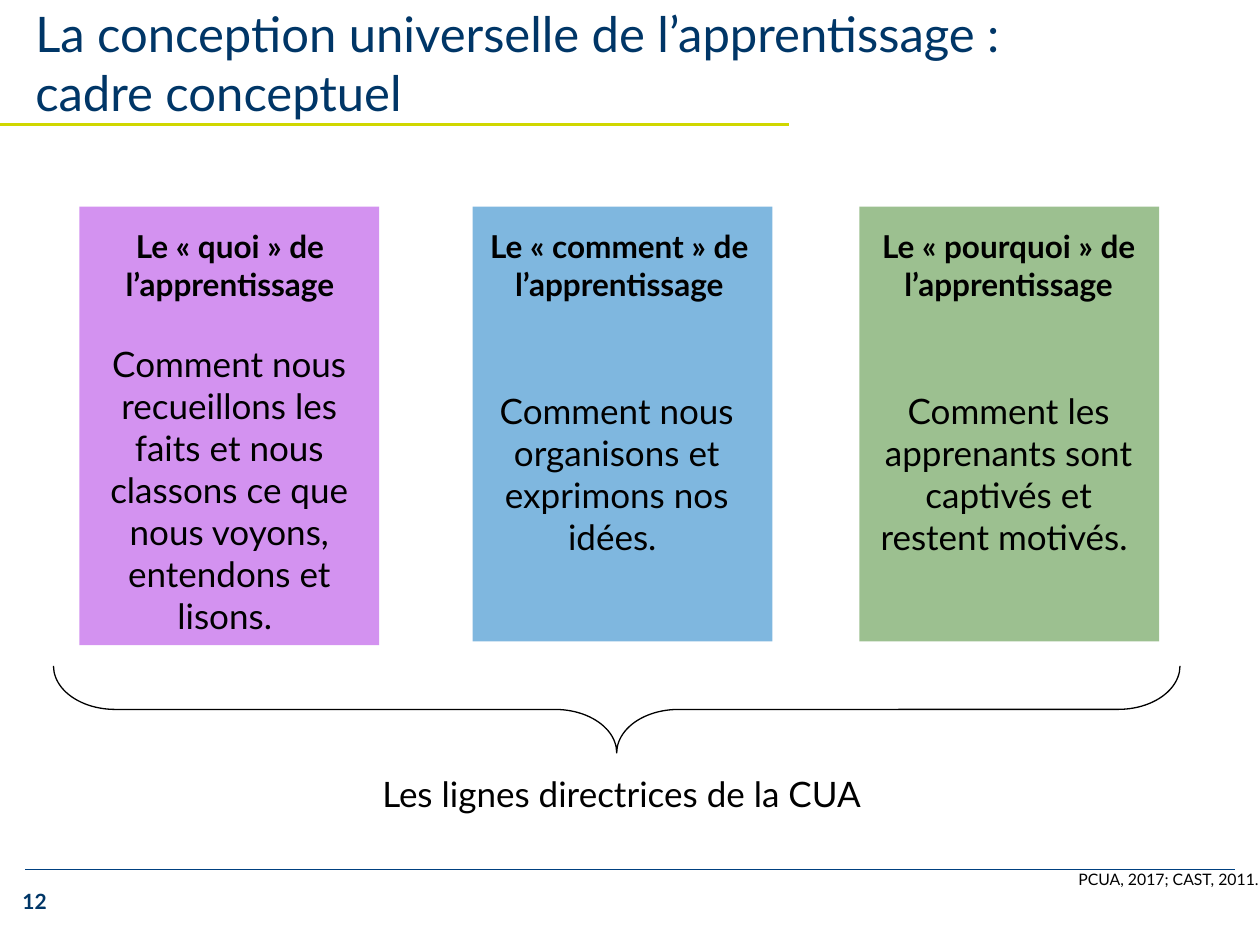
import pptx
import pptx.util
import pptx.dml.color
import pptx.enum.shapes
import pptx.enum.text
import pptx.oxml.ns
import lxml.etree

HUES = {
    "navy": "003667", "rule": "004080", "lime": "D0D700", "black": "000000",
    "quoi": "A826E2", "comment": "0070C0", "pourquoi": "3B8222",
}
FACE = "Lato"
CELL = 0.1  # inches: the slide is a grid of 100 columns by 75 rows
KIND = pptx.enum.shapes.MSO_SHAPE
ALIGN = pptx.enum.text.PP_ALIGN
ANCHOR = pptx.enum.text.MSO_ANCHOR
FIT = pptx.enum.text.MSO_AUTO_SIZE


def hue(name):
    return pptx.dml.color.RGBColor.from_string(HUES[name])


def grid(*cells):
    return [pptx.util.Inches(cell * CELL) for cell in cells]


def add_tag(parent, tag, **attrs):
    lxml.etree.SubElement(parent, pptx.oxml.ns.qn(tag), **attrs)


class Deck:
    def __init__(self):
        self.prs = pptx.Presentation()
        self.prs.slide_width, self.prs.slide_height = grid(100, 75)
        self.slide = self.prs.slides.add_slide(self.prs.slide_layouts[5])
        self.shapes = self.slide.shapes

    def style(self, shape, lines, size, color="black", bold=False,
              align=ALIGN.LEFT, anchor=ANCHOR.TOP):
        frame = shape.text_frame
        form = {"word_wrap": True, "auto_size": FIT.NONE,
                "vertical_anchor": anchor}
        for key, value in form.items():
            setattr(frame, key, value)
        frame.text = "\n".join(lines)
        look = {"name": FACE, "size": pptx.util.Pt(size), "bold": bold}
        for para in frame.paragraphs:
            para.alignment = align
            for run in para.runs:
                for key, value in look.items():
                    setattr(run.font, key, value)
                run.font.color.rgb = hue(color)

    def title(self, box, lines, **form):
        shape = self.shapes.title
        for key, value in zip(("left", "top", "width", "height"), grid(*box)):
            setattr(shape, key, value)
        self.style(shape, lines, **form)

    def text(self, box, words, **form):
        self.style(self.shapes.add_textbox(*grid(*box)), [words], **form)

    def line(self, start, end, color, width):
        rule = self.shapes.add_connector(
            pptx.enum.shapes.MSO_CONNECTOR.STRAIGHT, *grid(*start, *end))
        rule.line.color.rgb = hue(color)
        rule.line.width = pptx.util.Pt(width)
        add_tag(rule._element.spPr, "a:effectLst")

    def panel(self, box, color, alpha):
        shape = self.shapes.add_shape(KIND.RECTANGLE, *grid(*box))
        shape.shadow.inherit = False
        shape.fill.solid()
        shape.fill.fore_color.rgb = hue(color)
        shape.line.fill.background()
        tint = shape._element.spPr.find(".//" + pptx.oxml.ns.qn("a:srgbClr"))
        add_tag(tint, "a:alpha", val=str(alpha * 1000))

    def brace(self, box, bends):
        shape = self.shapes.add_shape(KIND.LEFT_BRACE, *grid(*box))
        shape.shadow.inherit = False
        shape.rotation = 270
        for i, bend in enumerate(bends):
            shape.adjustments[i] = bend
        shape.fill.background()
        shape.line.color.rgb = hue("black")
        shape.line.width = pptx.util.Pt(0.75)


def main():
    deck = Deck()
    mid = {"align": ALIGN.CENTER}

    # Rules, page number and title
    deck.line((2, 69), (98, 69), "rule", 0.5)
    deck.line((0, 9.9), (62.6, 9.9), "lime", 2)
    deck.text((0.8, 70, 9.5, 3), "12", size=12, color="navy", bold=True)
    deck.title((1.8, 0, 100.1, 9.9),
               ["La conception universelle de l’apprentissage :",
                "cadre conceptuel"],
               size=28, color="navy", anchor=ANCHOR.MIDDLE)

    # Source
    deck.text((84.6, 68.5, 16.8, 2.5), "PCUA, 2017; CAST, 2011.", size=9)

    # Panels: name, left, height, head left, body box, body text
    cards = [
        ("quoi", 6.3, 34.8, 7, (6.3, 26.7, 23.8, 24.6),
         "Comment nous recueillons les faits et nous classons ce que nous "
         "voyons, entendons et lisons. "),
        ("comment", 37.5, 34.5, 37.9, (37.7, 30.4, 22.5, 14.5),
         "Comment nous organisons et exprimons nos idées. "),
        ("pourquoi", 68.2, 34.5, 68.8, (68.8, 30.4, 22.5, 14.5),
         "Comment les apprenants sont captivés et restent motivés. "),
    ]
    for name, left, high, head, body, words in cards:
        deck.panel((left, 16.4, 23.8, high), name, 50)
        deck.text((head, 17.5, 22.5, 7.1),
                  f"Le « {name} » de l’apprentissage",
                  size=18, bold=True, **mid)
        deck.text(body, words, size=20, **mid)

    # Brace and its label
    deck.brace((45.5, 11.6, 6.9, 89.4), (0.71, 0.5))
    deck.text((28, 60.8, 42.7, 4.4), "Les lignes directrices de la CUA",
              size=20, **mid)

    deck.prs.save("out.pptx")


if __name__ == "__main__":
    main()
